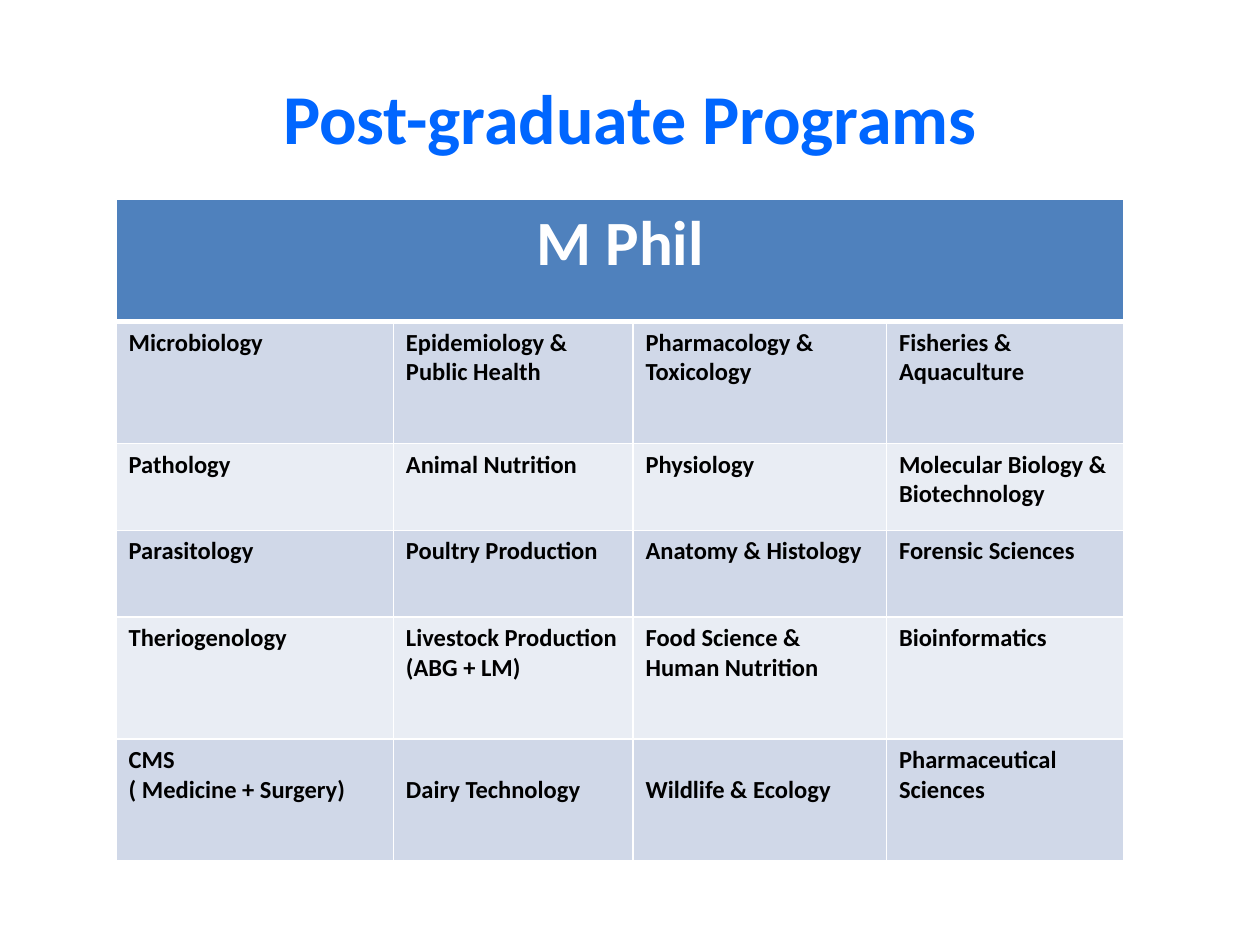
from lxml import etree
from pptx import Presentation
from pptx.dml.color import RGBColor
from pptx.enum.text import MSO_ANCHOR, PP_ALIGN
from pptx.oxml.ns import qn
from pptx.util import Cm, Pt

LEFT, CENTER = PP_ALIGN.LEFT, PP_ALIGN.CENTER
TOP, MIDDLE = MSO_ANCHOR.TOP, MSO_ANCHOR.MIDDLE

FONT = "Calibri"
TITLE_BLUE = RGBColor(0x00, 0x66, 0xFF)
HEADER_BLUE = RGBColor(0x4F, 0x81, 0xBD)
BAND_DARK = RGBColor(0xD0, 0xD8, 0xE8)
BAND_LIGHT = RGBColor(0xE9, 0xED, 0xF4)
WHITE = RGBColor(0xFF, 0xFF, 0xFF)
BLACK = RGBColor(0x00, 0x00, 0x00)

COLUMN_WIDTHS = [5.59, 4.83, 5.11, 4.79]
ROW_HEIGHTS = [2.46, 2.46, 1.75, 1.75, 2.46, 2.46]
LOWERED_PROGRAMS = {"Dairy Technology", "Wildlife & Ecology"}
PROGRAMS = [
    ["Microbiology", "Epidemiology & Public Health",
     "Pharmacology & Toxicology", "Fisheries & Aquaculture"],
    ["Pathology", "Animal Nutrition",
     "Physiology", "Molecular Biology & Biotechnology"],
    ["Parasitology", "Poultry Production",
     "Anatomy & Histology", "Forensic Sciences"],
    ["Theriogenology", "Livestock Production\n(ABG + LM)",
     "Food Science & Human Nutrition", "Bioinformatics"],
    ["CMS\n( Medicine + Surgery)", "Dairy Technology",
     "Wildlife & Ecology", "Pharmaceutical Sciences"],
]


def write_text(text_frame, text, *, size, color, align=LEFT):
    """Fill a text frame with bold text, one paragraph per line."""
    text_frame.text = text
    for paragraph in text_frame.paragraphs:
        paragraph.alignment = align
        for run in paragraph.runs:
            run.font.name = FONT
            run.font.size = Pt(size)
            run.font.bold = True
            run.font.color.rgb = color


def set_borders(cell, **widths):
    """Draw white cell borders, with widths in points keyed by side."""
    properties = cell._tc.get_or_add_tcPr()
    for side in "LRTB":
        line = etree.SubElement(properties, qn(f"a:ln{side}"),
                                w=str(Pt(widths.get(side, 1))))
        fill = etree.SubElement(line, qn("a:solidFill"))
        etree.SubElement(fill, qn("a:srgbClr"), val=str(WHITE))


def format_cell(cell, fill_color, **border_widths):
    """Give a cell its borders, fill and vertical anchor."""
    set_borders(cell, **border_widths)
    cell.fill.solid()
    cell.fill.fore_color.rgb = fill_color
    cell.vertical_anchor = TOP


def add_title(slide, text):
    """Place and format the title placeholder."""
    title = slide.shapes.title
    title.left, title.top = Cm(1.27), Cm(0.76)
    title.width, title.height = Cm(22.86), Cm(3.18)
    title.text_frame.vertical_anchor = MIDDLE
    write_text(title.text_frame, text, size=40, color=TITLE_BLUE, align=CENTER)


def add_program_table(slide, heading, programs):
    """Add the table of programs below one merged heading row."""
    table = slide.shapes.add_table(
        len(ROW_HEIGHTS), len(COLUMN_WIDTHS), Cm(2.34), Cm(4.02),
        Cm(sum(COLUMN_WIDTHS)), Cm(sum(ROW_HEIGHTS))).table
    for column, width in zip(table.columns, COLUMN_WIDTHS):
        column.width = Cm(width)
    for row, height in zip(table.rows, ROW_HEIGHTS):
        row.height = Cm(height)

    for cell in table.rows[0].cells:
        format_cell(cell, HEADER_BLUE, B=3)
    header = table.cell(0, 0)
    header.merge(table.cell(0, len(COLUMN_WIDTHS) - 1))
    write_text(header.text_frame, heading, size=36, color=WHITE, align=CENTER)

    for row_index, names in enumerate(programs, start=1):
        band = BAND_DARK if row_index % 2 else BAND_LIGHT
        for column_index, name in enumerate(names):
            cell = table.cell(row_index, column_index)
            format_cell(cell, band, T=3 if row_index == 1 else 1)
            write_text(cell.text_frame, name, size=14, color=BLACK)
            if name in LOWERED_PROGRAMS:
                cell.margin_top = Cm(0.73)


def main():
    """Build and save the slide."""
    presentation = Presentation()
    presentation.slide_width, presentation.slide_height = Cm(25.4), Cm(19.05)
    slide = presentation.slides.add_slide(presentation.slide_layouts[5])
    add_title(slide, "Post-graduate Programs")
    add_program_table(slide, "M Phil", PROGRAMS)
    presentation.save("out.pptx")


if __name__ == "__main__":
    main()
